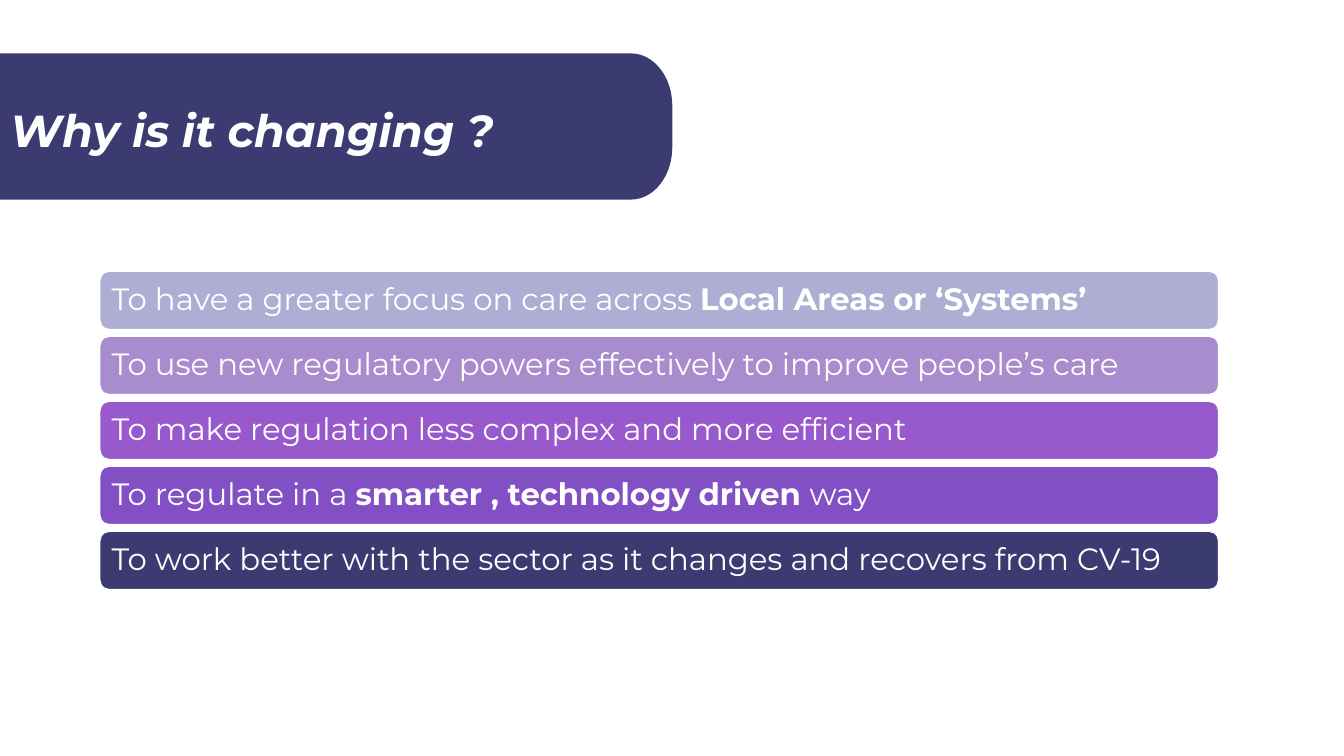
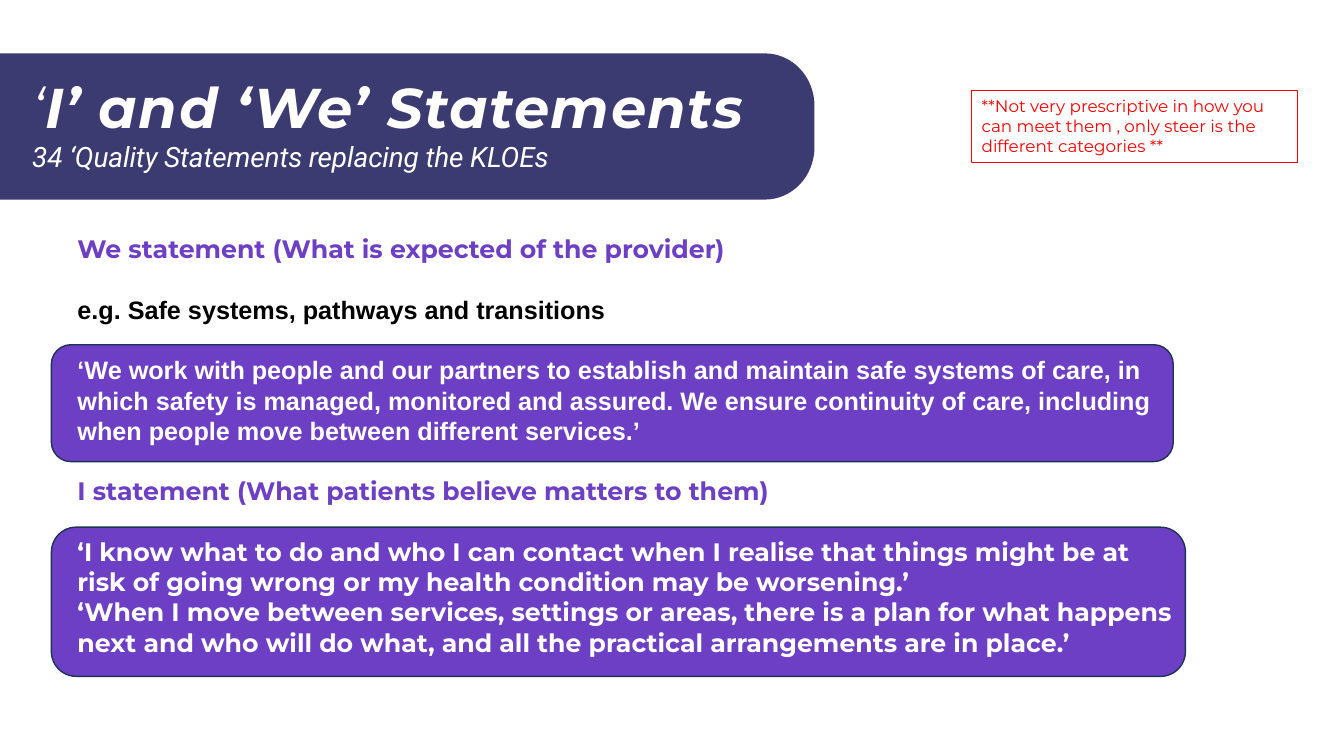
from dataclasses import dataclass
from math import cos, pi, sin

from pptx import Presentation
from pptx.dml.color import RGBColor
from pptx.enum.shapes import MSO_SHAPE
from pptx.enum.text import MSO_ANCHOR, PP_ALIGN
from pptx.util import Inches, Pt

ROUNDED, RECTANGLE = MSO_SHAPE.ROUNDED_RECTANGLE, MSO_SHAPE.RECTANGLE
TOP, MIDDLE, BOTTOM = MSO_ANCHOR.TOP, MSO_ANCHOR.MIDDLE, MSO_ANCHOR.BOTTOM
LEFT = PP_ALIGN.LEFT


@dataclass(frozen=True)
class Theme:
    navy: str = "3C3B71"
    purple: str = "6C3FC4"
    outline: str = "1E3256"
    white: str = "FFFFFF"
    black: str = "000000"
    red: str = "FF0000"
    heading: str = "Montserrat"
    plain: str = "Arial"
    subtitle: str = "Roboto"
    title_size: int = 32
    large_title_size: int = 40
    subtitle_size: int = 20
    bar_size: int = 22
    body_size: int = 18
    note_size: int = 12
    body_pitch: float = 21.6


THEME = Theme()

# Places are (column, row, columns, rows) on a grid of tenths of an inch.
CELL = 0.1
SLIDE_SIZE = (133.33, 75)
BANNER_TOP, BANNER_ROWS, CORNER_ROWS = 5.3, 14.5, 5.2

REASONS_TITLE = [[("Why is it changing ?", {"bold": True})]]
REASONS = [
    ("AEAED5", [("To have a greater focus on care across ", {}),
                ("Local Areas or ‘Systems’", {"bold": True})]),
    ("A88CCD", [("To use new regulatory powers effectively to improve people’s care", {})]),
    ("9859CD", [("To make regulation less complex and more efficient", {})]),
    ("8250C4", [("To regulate in a ", {}),
                ("smarter , technology driven ", {"bold": True}),
                ("way", {})]),
    (THEME.navy, [("To work better with the sector as it changes and recovers from CV-19", {})]),
]
BAR_LEFT, BAR_TOP, BAR_COLUMNS, BAR_ROWS, BAR_PITCH = 9.9, 26.9, 111, 5.8, 6.45

SUBTITLE = {"font": THEME.subtitle, "size": THEME.subtitle_size}
STATEMENTS_TITLE = [
    [("‘", {"tracking": 1.1}),
     ("I’ and ‘We’ Statements", {"bold": True, "tracking": 1.1})],
    [("34 ", SUBTITLE),
     ("‘Quality Statements replacing the KLOEs", {**SUBTITLE, "tracking": -0.1})],
]
PURPLE_HEAD = {"color": THEME.purple}
STATEMENTS = [
    [("We statement (What is expected of the provider)", PURPLE_HEAD)],
    [("e.g. Safe systems, pathways and transitions",
      {"font": THEME.plain, "color": THEME.black})],
    [("‘We work with people and our partners to establish and maintain safe systems of "
      "care, in which safety is managed, monitored and assured. We ensure continuity of "
      "care, including when people move between different services.’",
      {"font": THEME.plain})],
    [("I statement (What patients believe matters to them)", PURPLE_HEAD)],
    [("‘I know what to do and who I can contact when I realise that things might be at", {})],
    [("risk of going wrong or my health condition may be worsening.’", {})],
    [("‘When I move between services, settings or areas, there is a plan for what happens "
      "next and who will do what, and all the practical arrangements are in place.’", {})],
]
SPACED_STATEMENTS = {1, 2, 3, 4}
QUOTE_PANELS = [(5.1, 34.2, 111.3, 11.6), (5.1, 52.3, 112.5, 14.8)]
NOTE = [[("**Not very prescriptive in how you can meet them , only steer is the "
          "different categories **", {})]]


def grid(*cells):
    return [Inches(cell * CELL) for cell in cells]


def paint(shape, fill=None, line=None, width=1):
    shape.shadow.inherit = False
    if fill:
        shape.fill.solid()
        shape.fill.fore_color.rgb = RGBColor.from_string(fill)
    else:
        shape.fill.background()
    if line:
        shape.line.color.rgb = RGBColor.from_string(line)
        shape.line.width = Pt(width)
    else:
        shape.line.fill.background()


def write(shape, paragraphs, *, size, anchor=TOP, insets=(1, 0.5, 1, 0.5),
          line_spacing=None, spaced=(), gap=0, **base):
    """Fill a shape with paragraphs of (text, format) runs; spaced ones get a gap before."""
    frame = shape.text_frame
    frame.word_wrap = True
    frame.vertical_anchor = anchor
    (frame.margin_left, frame.margin_top,
     frame.margin_right, frame.margin_bottom) = grid(*insets)
    for index, runs in enumerate(paragraphs):
        paragraph = frame.paragraphs[0] if index == 0 else frame.add_paragraph()
        paragraph.alignment = LEFT
        if line_spacing:
            paragraph.line_spacing = line_spacing
        if index in spaced:
            paragraph.space_before = Pt(gap)
        for text, changes in runs:
            style = {"font": THEME.heading, "color": THEME.white, "size": size,
                     **base, **changes}
            run = paragraph.add_run()
            run.text = text
            run.font.name = style["font"]
            run.font.size = Pt(style["size"])
            run.font.bold = style.get("bold", False)
            run.font.italic = style.get("italic", False)
            run.font.color.rgb = RGBColor.from_string(style["color"])
            if "tracking" in style:
                run.font._element.set("spc", str(round(style["tracking"] * 100)))


def add_banner(slide, columns, corner_columns):
    """Draw the title band from the left edge, with elliptical corners on the right."""
    steps = 16
    center = columns - corner_columns
    outline = []
    for middle, start in ((BANNER_TOP + CORNER_ROWS, -pi / 2),
                          (BANNER_TOP + BANNER_ROWS - CORNER_ROWS, 0)):
        for step in range(steps + 1):
            angle = start + step / steps * pi / 2
            outline.append(grid(center + corner_columns * cos(angle),
                                middle + CORNER_ROWS * sin(angle)))
    outline.append(grid(0, BANNER_TOP + BANNER_ROWS))
    builder = slide.shapes.build_freeform(*grid(0, BANNER_TOP))
    builder.add_line_segments(outline, close=True)
    paint(builder.convert_to_shape(), THEME.navy)


def add_title(slide, place, paragraphs, **style):
    title = slide.shapes.add_textbox(*grid(*place))
    write(title, paragraphs, anchor=BOTTOM, italic=True, **style)


def build_reasons(slide):
    add_banner(slide, 66.7, 4.1)
    add_title(slide, (0, 9.1, 59.1, 7), REASONS_TITLE,
              size=THEME.title_size, line_spacing=0.9)
    for row, (color, runs) in enumerate(REASONS):
        bar = slide.shapes.add_shape(
            ROUNDED, *grid(BAR_LEFT, BAR_TOP + row * BAR_PITCH, BAR_COLUMNS, BAR_ROWS))
        paint(bar, color, THEME.white)
        write(bar, [runs], size=THEME.bar_size, anchor=MIDDLE,
              insets=(0.9, 0, 0.9, 0), line_spacing=0.9)


def build_statements(slide):
    for place in QUOTE_PANELS:
        paint(slide.shapes.add_shape(ROUNDED, *grid(*place)), THEME.purple, THEME.outline)
    add_banner(slide, 80.8, 4.9)
    add_title(slide, (3.1, 6.6, 74.5, 10.6), STATEMENTS_TITLE,
              size=THEME.large_title_size, insets=(0.1, 0.1, 0, 0))
    body = slide.shapes.add_textbox(*grid(6.7, 22.7, 114.1, 46.4))
    write(body, STATEMENTS, size=THEME.body_size, bold=True,
          line_spacing=Pt(THEME.body_pitch), spaced=SPACED_STATEMENTS,
          gap=THEME.body_pitch)
    note = slide.shapes.add_shape(RECTANGLE, *grid(96.4, 9, 32.3, 7.1))
    paint(note, line=THEME.red, width=0.75)
    write(note, NOTE, size=THEME.note_size, color=THEME.red)


def main():
    deck = Presentation()
    deck.slide_width, deck.slide_height = grid(*SLIDE_SIZE)
    blank = deck.slide_layouts[6]
    for build in (build_reasons, build_statements):
        build(deck.slides.add_slide(blank))
    deck.save("out.pptx")


if __name__ == "__main__":
    main()
